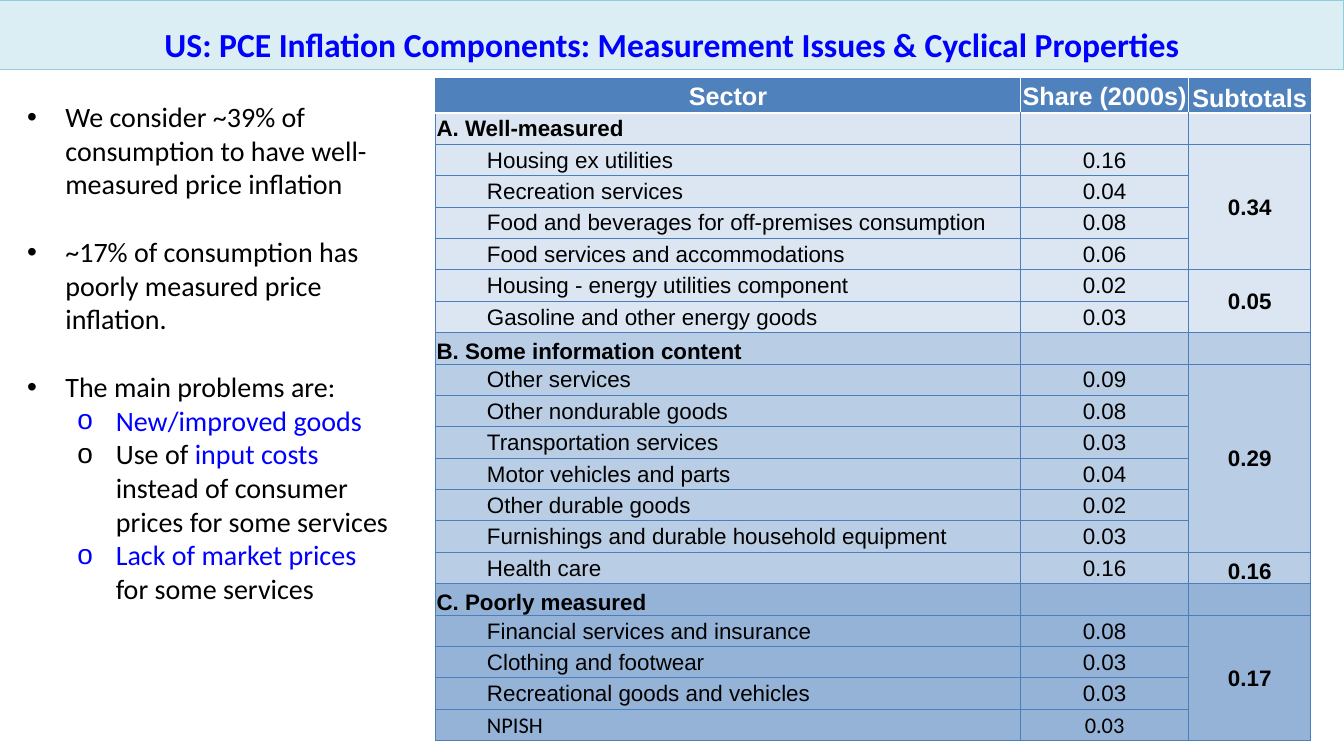
from dataclasses import dataclass

from lxml import etree
from pptx import Presentation
from pptx.dml.color import RGBColor
from pptx.enum.shapes import MSO_SHAPE
from pptx.enum.text import MSO_ANCHOR, PP_ALIGN
from pptx.oxml.ns import qn
from pptx.util import Inches, Pt

RECTANGLE = MSO_SHAPE.RECTANGLE
MIDDLE, BOTTOM = MSO_ANCHOR.MIDDLE, MSO_ANCHOR.BOTTOM
LEFT, CENTER = PP_ALIGN.LEFT, PP_ALIGN.CENTER

TITLE = "US: PCE Inflation Components: Measurement Issues & Cyclical Properties"

# (level, starts a new block, [(text, highlighted)])
POINTS = [
    (0, False, [("We consider ~39% of consumption to have well-measured price inflation", False)]),
    (0, True, [("~17% of consumption has poorly measured price inflation.", False)]),
    (0, True, [("The main problems are:", False)]),
    (1, False, [("New/improved goods", True)]),
    (1, False, [("Use of ", False), ("input costs", True),
                (" instead of consumer prices for some services", False)]),
    (1, False, [("Lack of market prices ", True), ("for some services", False)]),
]

HEADINGS = ["Sector", "Share (2000s)", "Subtotals"]

# (band, heading anchor, band fill, [(subtotal, [(sector, share)])])
BANDS = [
    ("A. Well-measured", MIDDLE, "DCE6F2", [
        ("0.34", [("Housing ex utilities", "0.16"),
                  ("Recreation services", "0.04"),
                  ("Food and beverages for off-premises consumption", "0.08"),
                  ("Food services and accommodations", "0.06")]),
        ("0.05", [("Housing - energy utilities component", "0.02"),
                  ("Gasoline and other energy goods", "0.03")]),
    ]),
    ("B. Some information content", BOTTOM, "B9CDE5", [
        ("0.29", [("Other services", "0.09"),
                  ("Other nondurable goods", "0.08"),
                  ("Transportation services", "0.03"),
                  ("Motor vehicles and parts", "0.04"),
                  ("Other durable goods", "0.02"),
                  ("Furnishings and durable household equipment", "0.03")]),
        ("0.16", [("Health care", "0.16")]),
    ]),
    ("C. Poorly measured", BOTTOM, "95B3D7", [
        ("0.17", [("Financial services and insurance", "0.08"),
                  ("Clothing and footwear", "0.03"),
                  ("Recreational goods and vehicles", "0.03"),
                  ("NPISH", "0.03")]),
    ]),
]
CALIBRI_SECTORS = {"NPISH"}


@dataclass(frozen=True)
class Theme:
    body_font: str = "Calibri"
    table_font: str = "Arial"
    title_size: int = 24
    point_size: int = 20
    heading_size: int = 18
    cell_size: int = 16
    text: str = "000000"
    white: str = "FFFFFF"
    highlight: str = "0000FF"
    title_fill: str = "DBEEF4"
    title_line: str = "93CDDD"
    heading_fill: str = "4F81BD"
    grid: str = "4B7EBC"


THEME = Theme()
WIDTH, HEIGHT = 13.33, 7.5
TITLE_HEIGHT = 0.69
POINTS_BOX = (0.17, 0.94, 3.82, 5.15)
TABLE_LEFT, TABLE_TOP, TABLE_HEIGHT = 4.32, 0.78, 6.57
COLUMNS = (5.8, 1.67, 1.21)
HEADING_ROW = 0.34
HANGING, LEVEL_STEP, SECTOR_INDENT = 0.38, 0.5, 0.5
BLOCK_GAP = 24.4


def add_text(paragraph, text, *, size, font=THEME.body_font, color=THEME.text,
             bold=False, align=LEFT):
    paragraph.alignment = align
    run = paragraph.add_run()
    run.text = text
    run.font.name, run.font.size, run.font.bold = font, Pt(size), bold
    run.font.color.rgb = RGBColor.from_string(color)


def set_indent(paragraph, left, first=0.0):
    properties = paragraph._p.get_or_add_pPr()
    properties.set("marL", str(Inches(left)))
    properties.set("indent", str(Inches(first)))
    return properties


def set_borders(cell, **sides):
    """Give L, R, T and B, in that order, each as (colour, points)."""
    properties = cell._tc.get_or_add_tcPr()
    for side, (color, points) in sides.items():
        line = etree.SubElement(properties, qn(f"a:ln{side}"), w=str(Pt(points)))
        fill = etree.SubElement(line, qn("a:solidFill"))
        etree.SubElement(fill, qn("a:srgbClr"), val=color)


def fill_cell(cell, text, fill, anchor=MIDDLE, indent=0.0, size=THEME.cell_size, **style):
    cell.margin_left = cell.margin_right = cell.margin_top = Inches(0.01)
    cell.margin_bottom = 0
    cell.vertical_anchor = anchor
    cell.fill.solid()
    cell.fill.fore_color.rgb = RGBColor.from_string(fill)
    paragraph = cell.text_frame.paragraphs[0]
    if text:
        add_text(paragraph, text, size=size, **style)
    else:
        etree.SubElement(paragraph._p, qn("a:endParaRPr"), sz=str(size * 100))
    if indent:
        paragraph.level = 1
        set_indent(paragraph, indent)


def add_title(slide):
    banner = slide.shapes.add_shape(RECTANGLE, 0, 0, Inches(WIDTH), Inches(TITLE_HEIGHT))
    banner.shadow.inherit = False
    banner.fill.solid()
    banner.fill.fore_color.rgb = RGBColor.from_string(THEME.title_fill)
    banner.line.color.rgb = RGBColor.from_string(THEME.title_line)
    banner.line.width = 0
    banner.text_frame.vertical_anchor = BOTTOM
    add_text(banner.text_frame.paragraphs[0], TITLE, size=THEME.title_size,
             color=THEME.highlight, bold=True, align=CENTER)


def add_points(slide):
    frame = slide.shapes.add_textbox(*map(Inches, POINTS_BOX)).text_frame
    frame.word_wrap = True
    for index, (level, new_block, parts) in enumerate(POINTS):
        paragraph = frame.add_paragraph() if index else frame.paragraphs[0]
        paragraph.level = level
        paragraph.space_before = Pt(BLOCK_GAP if new_block else 0)
        properties = set_indent(paragraph, HANGING + level * LEVEL_STEP, -HANGING)
        etree.SubElement(properties, qn("a:buFont"), typeface=THEME.table_font)
        etree.SubElement(properties, qn("a:buChar"), char="•o"[level])
        for text, highlighted in parts:
            add_text(paragraph, text, size=THEME.point_size,
                     color=THEME.highlight if highlighted else THEME.text)


def add_sector_table(slide):
    row_count = 1 + sum(1 + sum(len(sectors) for _, sectors in groups)
                        for *_, groups in BANDS)
    table = slide.shapes.add_table(
        row_count, len(COLUMNS), Inches(TABLE_LEFT), Inches(TABLE_TOP),
        Inches(sum(COLUMNS)), Inches(TABLE_HEIGHT)).table
    table.first_row = table.horz_banding = False
    for column, width in zip(table.columns, COLUMNS):
        column.width = Inches(width)
    body_row = (TABLE_HEIGHT - HEADING_ROW) / (row_count - 1)
    for index, row in enumerate(table.rows):
        row.height = Inches(body_row if index else HEADING_ROW)

    grid, rule = (THEME.grid, 0.75), (THEME.white, 2)
    last = len(COLUMNS) - 1
    for column, heading in enumerate(HEADINGS):
        cell = table.cell(0, column)
        sides = {"L": grid} if column == 0 else {"R": grid} if column == last else {}
        set_borders(cell, **sides, T=grid, B=rule)
        fill_cell(cell, heading, THEME.heading_fill, BOTTOM if column == last else MIDDLE,
                  size=THEME.heading_size, font=THEME.table_font, color=THEME.white,
                  bold=True, align=CENTER)
        for row in range(1, row_count):
            set_borders(table.cell(row, column), L=grid, R=grid,
                        T=rule if row == 1 else grid, B=grid)

    row = 1
    for band, anchor, fill, groups in BANDS:
        for column, text in enumerate((band, "", "")):
            fill_cell(table.cell(row, column), text, fill, anchor,
                      font=THEME.table_font, bold=True)
        row += 1
        for subtotal, sectors in groups:
            total = table.cell(row, last)
            if len(sectors) > 1:
                total.merge(table.cell(row + len(sectors) - 1, last))
            fill_cell(total, subtotal, fill, MIDDLE if len(sectors) > 1 else BOTTOM,
                      font=THEME.table_font, bold=True, align=CENTER)
            for sector, share in sectors:
                font = THEME.body_font if sector in CALIBRI_SECTORS else THEME.table_font
                fill_cell(table.cell(row, 0), sector, fill, indent=SECTOR_INDENT, font=font)
                fill_cell(table.cell(row, 1), share, fill, font=font, align=CENTER)
                row += 1


def main():
    deck = Presentation()
    deck.slide_width, deck.slide_height = Inches(WIDTH), Inches(HEIGHT)
    slide = deck.slides.add_slide(deck.slide_layouts[6])
    add_sector_table(slide)
    add_title(slide)
    add_points(slide)
    deck.save("out.pptx")


if __name__ == "__main__":
    main()
